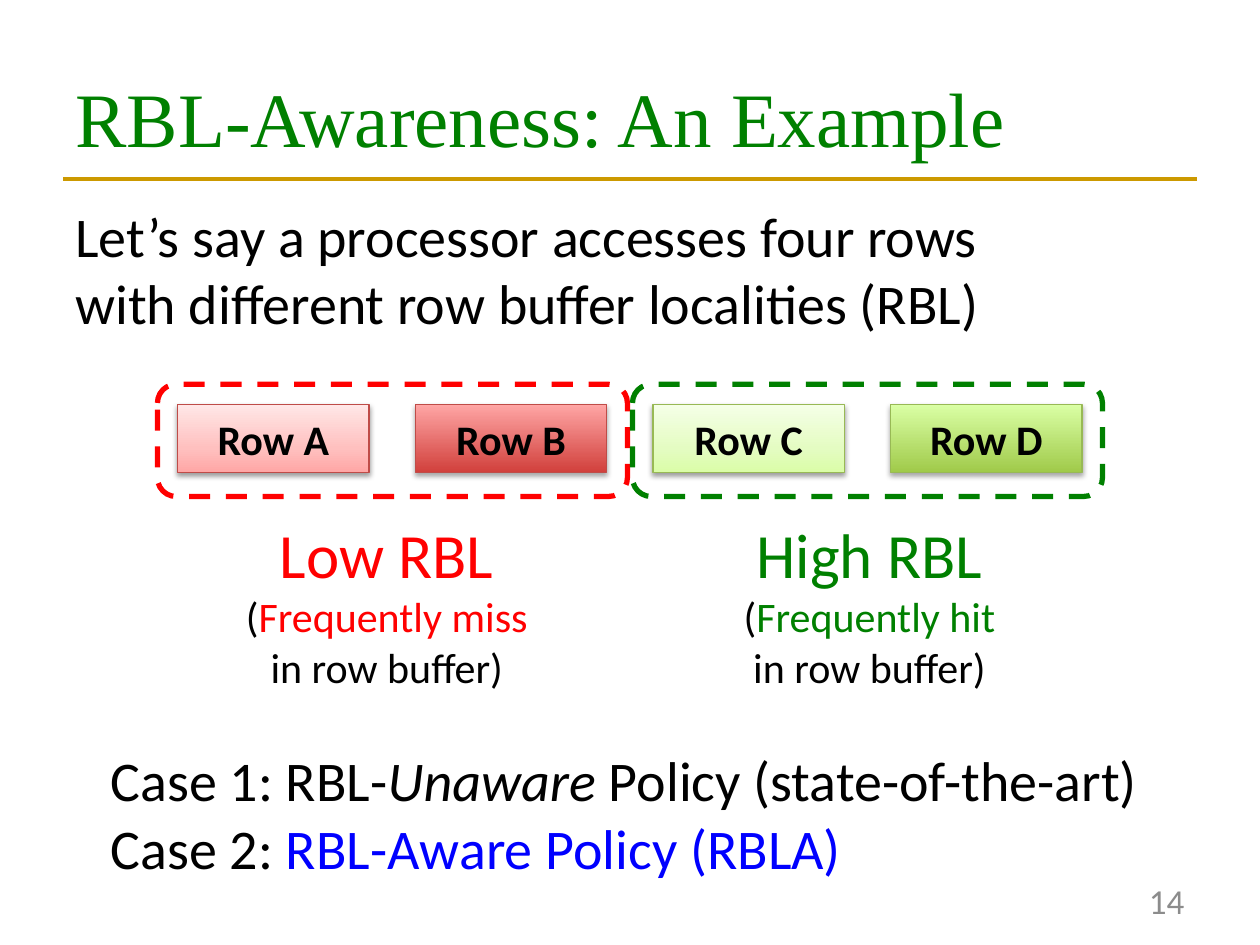
from dataclasses import dataclass

from copy import deepcopy
from lxml.etree import SubElement
from pptx import Presentation
from pptx.dml.color import RGBColor
from pptx.enum.dml import MSO_LINE
from pptx.enum.shapes import MSO_CONNECTOR, MSO_SHAPE
from pptx.enum.text import MSO_ANCHOR, MSO_AUTO_SIZE, PP_ALIGN
from pptx.oxml.ns import qn
from pptx.util import Inches, Pt

BLACK = "000000"
RED = "FF0000"
GREEN = "008000"
BLUE = "0000FF"
GOLD = "CC9900"
GREY = "8C8C8C"
RED_EDGE = "BF4C48"
GREEN_EDGE = "98B955"

ROW_LEFT = 1.41
ROW_PITCH = 1.886


@dataclass
class Span:
    text: str
    size: int
    color: str = BLACK
    italic: bool = False


@dataclass
class MemoryRow:
    label: str
    stops: list[tuple[float, str]]
    edge: str
    shadow_distance: float
    shadow_opacity: int


@dataclass
class Locality:
    level: str
    outcome: str
    color: str
    frame_left: float
    caption_left: float
    caption_width: float


def rgb(value: str) -> RGBColor:
    return RGBColor.from_string(value)


def style(run, size: int, color: str, font: str = "Calibri", bold: bool = False, italic: bool = False) -> None:
    run.font.name = font
    run.font.size = Pt(size)
    run.font.color.rgb = rgb(color)
    run.font.bold = bold
    run.font.italic = italic


def add_text(slide, box: tuple, lines: list[list[Span]], align=PP_ALIGN.LEFT, wrap: bool = False):
    frame = slide.shapes.add_textbox(*map(Inches, box)).text_frame
    frame.word_wrap = wrap
    frame.auto_size = MSO_AUTO_SIZE.SHAPE_TO_FIT_TEXT
    for index, spans in enumerate(lines):
        paragraph = frame.paragraphs[0] if index == 0 else frame.add_paragraph()
        paragraph.alignment = align
        for span in spans:
            run = paragraph.add_run()
            run.text = span.text
            style(run, span.size, span.color, italic=span.italic)
    return frame


def add_shadow(shape, distance: float, opacity: int) -> None:
    effects = shape._element.spPr.find(qn("a:effectLst"))
    shadow = SubElement(effects, qn("a:outerShdw"), blurRad=str(Pt(3.1)),
                        dist=str(Pt(distance)), dir="5400000", rotWithShape="0")
    color = SubElement(shadow, qn("a:srgbClr"), val=BLACK)
    SubElement(color, qn("a:alpha"), val=str(opacity * 1000))


def fill_gradient(shape, stops: list[tuple[float, str]]) -> None:
    shape.fill.gradient()
    shape.fill.gradient_angle = 90
    stop_list = shape._element.spPr.find(".//" + qn("a:gsLst"))
    for _ in stops[2:]:
        stop_list.append(deepcopy(stop_list[0]))
    for stop, (position, color) in zip(shape.fill.gradient_stops, stops):
        stop.position = position
        stop.color.rgb = rgb(color)


def add_memory_row(slide, row: MemoryRow, left: float) -> None:
    block = slide.shapes.add_shape(MSO_SHAPE.RECTANGLE, Inches(left), Inches(3.21), Inches(1.52), Inches(0.54))
    block.shadow.inherit = False
    fill_gradient(block, row.stops)
    block.line.color.rgb = rgb(row.edge)
    block.line.width = Pt(0.75)
    add_shadow(block, row.shadow_distance, row.shadow_opacity)
    block.text_frame.text = row.label
    block.text_frame.vertical_anchor = MSO_ANCHOR.MIDDLE
    paragraph = block.text_frame.paragraphs[0]
    paragraph.alignment = PP_ALIGN.CENTER
    style(paragraph.runs[0], 24, BLACK, bold=True)


def add_locality(slide, locality: Locality) -> None:
    frame = slide.shapes.add_shape(MSO_SHAPE.ROUNDED_RECTANGLE, Inches(locality.frame_left),
                                   Inches(3.05), Inches(3.73), Inches(0.89))
    frame.shadow.inherit = False
    frame.fill.background()
    frame.line.color.rgb = rgb(locality.color)
    frame.line.width = Pt(3)
    frame.line.dash_style = MSO_LINE.DASH
    add_text(slide, (locality.caption_left, 4.04, locality.caption_width, 1.51), [
        [Span(locality.level, 36, locality.color)],
        [Span("(", 24), Span(locality.outcome, 24, locality.color)],
        [Span("in row buffer)", 24)],
    ], PP_ALIGN.CENTER)


def add_title(slide) -> None:
    rule = slide.shapes.add_connector(MSO_CONNECTOR.STRAIGHT, Inches(0.5), Inches(1.42), Inches(9.5), Inches(1.42))
    rule.line.color.rgb = rgb(GOLD)
    rule.line.width = Pt(2.25)
    SubElement(rule._element.spPr, qn("a:effectLst"))
    title = slide.shapes.title
    title.left, title.top, title.width, title.height = map(Inches, (0.5, 0.3, 9, 1.25))
    title.text_frame.text = "RBL-Awareness: An Example"
    title.text_frame.vertical_anchor = MSO_ANCHOR.MIDDLE
    heading = title.text_frame.paragraphs[0]
    heading.alignment = PP_ALIGN.LEFT
    style(heading.runs[0], 44, GREEN, font="Times New Roman")


def main() -> None:
    presentation = Presentation()
    presentation.slide_width = Inches(10)
    presentation.slide_height = Inches(7.5)
    slide = presentation.slides.add_slide(presentation.slide_layouts[5])
    add_title(slide)

    page_number = add_text(slide, (7.17, 6.95, 2.33, 0.4), [[Span("14", 20, GREY)]], PP_ALIGN.RIGHT, wrap=True)
    page_number.auto_size = MSO_AUTO_SIZE.NONE
    page_number.vertical_anchor = MSO_ANCHOR.MIDDLE

    intro = "Let’s say a processor accesses four rows\vwith different row buffer localities (RBL)"
    introduction = add_text(slide, (0.5, 1.55, 7.46, 1.18), [])
    introduction.text = intro
    for run in introduction.paragraphs[0].runs:
        style(run, 32, BLACK)

    rows = [
        MemoryRow("Row A", [(0, "FFA6A5"), (0.35, "FFC0BF"), (1, "FFE7E7")], RED_EDGE, 1.6, 38),
        MemoryRow("Row B", [(0, "D1403C"), (1, "FFA6A5")], RED_EDGE, 1.8, 35),
        MemoryRow("Row C", [(0, "DAFDA7"), (0.35, "E4FCC2"), (1, "F5FFE7")], GREEN_EDGE, 1.6, 38),
        MemoryRow("Row D", [(0, "A0CA4A"), (1, "DAFFA5")], GREEN_EDGE, 1.8, 35),
    ]
    for index, row in enumerate(rows):
        add_memory_row(slide, row, ROW_LEFT + index * ROW_PITCH)

    localities = [
        Locality("Low RBL", "Frequently miss", RED, 1.25, 1.84, 2.46),
        Locality("High RBL", "Frequently hit", GREEN, 5.02, 5.79, 2.22),
    ]
    for locality in localities:
        add_locality(slide, locality)

    add_text(slide, (0.78, 5.87, 8.4, 1.18), [
        [Span("Case 1: RBL-", 32), Span("Unaware", 32, italic=True), Span(" Policy (state-of-the-art)", 32)],
        [Span("Case 2: ", 32), Span("RBL-Aware Policy (RBLA)", 32, BLUE)],
    ], wrap=True)
    presentation.save("out.pptx")


if __name__ == "__main__":
    main()
